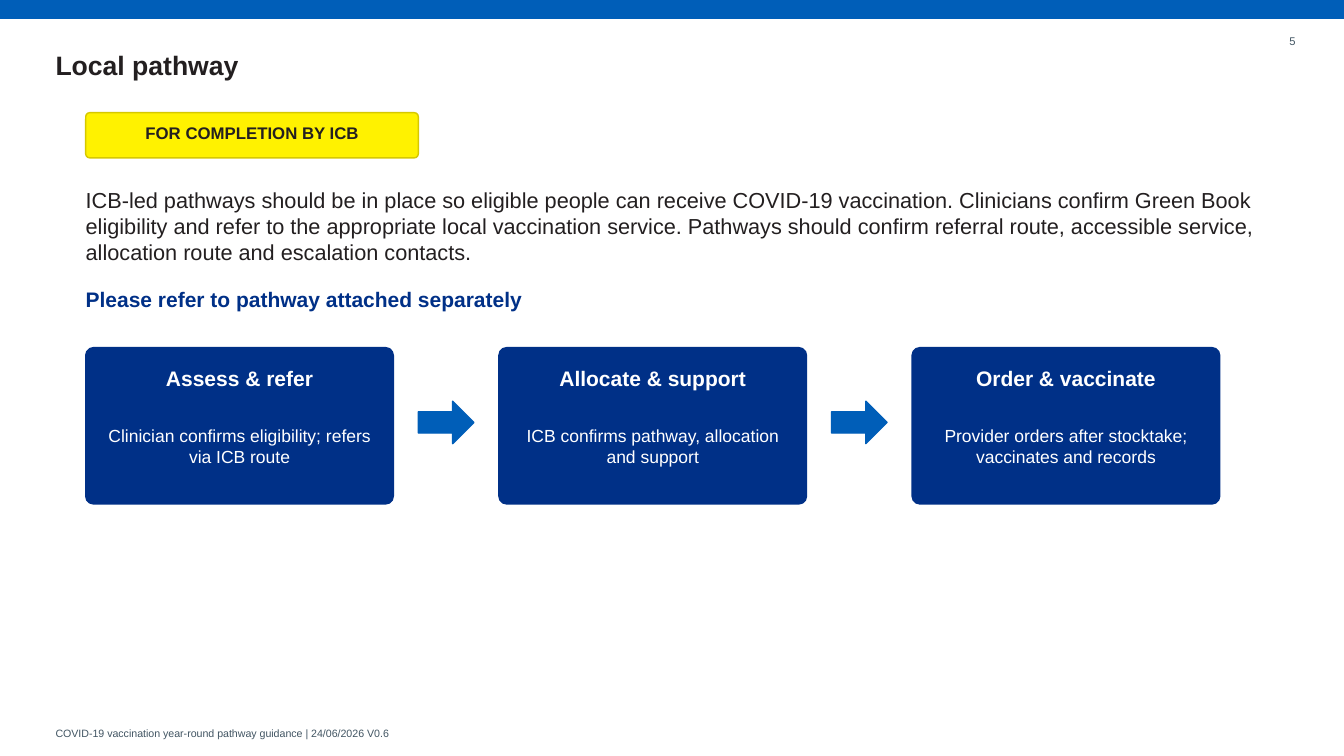
from dataclasses import dataclass

from pptx import Presentation
from pptx.dml.color import RGBColor
from pptx.enum.shapes import MSO_SHAPE
from pptx.enum.text import MSO_ANCHOR, PP_ALIGN
from pptx.util import Cm, Pt

RECTANGLE = MSO_SHAPE.RECTANGLE
ROUNDED = MSO_SHAPE.ROUNDED_RECTANGLE
RIGHT_ARROW = MSO_SHAPE.RIGHT_ARROW
MIDDLE = MSO_ANCHOR.MIDDLE
LEFT, CENTER, RIGHT = PP_ALIGN.LEFT, PP_ALIGN.CENTER, PP_ALIGN.RIGHT


@dataclass(frozen=True)
class Theme:
    font: str = "Arial"
    ink: str = "231F20"
    muted: str = "425563"
    blue: str = "005EB8"
    navy: str = "003087"
    yellow: str = "FFF200"
    yellow_edge: str = "D6C800"
    white: str = "FFFFFF"
    title_size: float = 19
    body_size: float = 15.5
    heading_size: float = 15
    detail_size: float = 12.5
    badge_size: float = 12
    number_size: float = 8
    footer_size: float = 7.6


THEME = Theme()
SLIDE_WIDTH, SLIDE_HEIGHT = 33.86, 19.05
MARGIN, INDENT = 1.4, 2.16
CARD_TOP, CARD_WIDTH, CARD_HEIGHT, CARD_PITCH = 8.76, 7.75, 3.94, 10.41

STEPS = [
    ("Assess & refer", "Clinician confirms eligibility; refers via ICB route"),
    ("Allocate & support", "ICB confirms pathway, allocation and support"),
    ("Order & vaccinate", "Provider orders after stocktake; vaccinates and records"),
]


def add_block(slide, kind, left, top, width, height, fill, edge=None, rounding=None):
    """Add a filled preset shape, outlined in its own colour unless edge is given."""
    block = slide.shapes.add_shape(kind, Cm(left), Cm(top), Cm(width), Cm(height))
    block.shadow.inherit = False
    block.fill.solid()
    block.fill.fore_color.rgb = RGBColor.from_string(fill)
    block.line.color.rgb = RGBColor.from_string(edge or fill)
    block.line.width = Pt(1)
    if rounding is not None:
        block.adjustments[0] = rounding


def add_label(slide, text, left, top, width, height, size,
              color=THEME.ink, bold=False, align=LEFT):
    label = slide.shapes.add_textbox(Cm(left), Cm(top), Cm(width), Cm(height))
    frame = label.text_frame
    frame.text = text
    frame.word_wrap = True
    frame.vertical_anchor = MIDDLE
    frame.margin_left = frame.margin_top = frame.margin_right = frame.margin_bottom = 0
    paragraph = frame.paragraphs[0]
    paragraph.alignment = align
    font = paragraph.runs[0].font
    font.name = THEME.font
    font.size = Pt(size)
    font.bold = bold
    font.color.rgb = RGBColor.from_string(color)


def add_page_frame(slide):
    """Add the top bar, title, page number and footer."""
    add_block(slide, RECTANGLE, 0, 0, SLIDE_WIDTH, 0.46, THEME.blue)
    add_label(slide, "Local pathway", MARGIN, 1.07, 29.46, 1.14,
              THEME.title_size, bold=True)
    add_label(slide, "5", 31.62, 0.71, 1.02, 0.64,
              THEME.number_size, THEME.muted, align=RIGHT)
    add_label(slide, "COVID-19 vaccination year-round pathway guidance | 24/06/2026 V0.6",
              MARGIN, 18.24, 24.13, 0.46, THEME.footer_size, THEME.muted)


def add_badge(slide):
    add_block(slide, ROUNDED, INDENT, 2.84, 8.38, 1.14,
              THEME.yellow, THEME.yellow_edge, 0.09)
    add_label(slide, "FOR COMPLETION BY ICB", INDENT + 0.51, 3.15, 7.37, 0.41,
              THEME.badge_size, bold=True, align=CENTER)


def add_introduction(slide):
    add_label(slide,
              "ICB-led pathways should be in place so eligible people can receive "
              "COVID-19 vaccination. Clinicians confirm Green Book eligibility and "
              "refer to the appropriate local vaccination service. Pathways should "
              "confirm referral route, accessible service, allocation route and "
              "escalation contacts.",
              INDENT, 4.62, 29.59, 2.16, THEME.body_size)
    add_label(slide, "Please refer to pathway attached separately",
              INDENT, 7.16, 28.7, 0.76, THEME.heading_size, THEME.navy, bold=True)


def add_step_card(slide, left, heading, detail):
    add_block(slide, ROUNDED, left, CARD_TOP, CARD_WIDTH, CARD_HEIGHT,
              THEME.navy, rounding=0.05)
    add_label(slide, heading, left + 0.3, CARD_TOP + 0.41, CARD_WIDTH - 0.6, 0.71,
              THEME.heading_size, THEME.white, bold=True, align=CENTER)
    add_label(slide, detail, left + 0.41, CARD_TOP + 1.4, CARD_WIDTH - 0.82, 2.16,
              THEME.detail_size, THEME.white, align=CENTER)


def add_pathway(slide):
    """Add the step cards with an arrow after each one but the last."""
    for index, (heading, detail) in enumerate(STEPS):
        left = INDENT + index * CARD_PITCH
        add_step_card(slide, left, heading, detail)
        if index < len(STEPS) - 1:
            add_block(slide, RIGHT_ARROW, left + CARD_WIDTH + 0.63, CARD_TOP + 1.35,
                      1.4, 1.07, THEME.blue)


def main():
    presentation = Presentation()
    presentation.slide_width = Cm(SLIDE_WIDTH)
    presentation.slide_height = Cm(SLIDE_HEIGHT)
    slide = presentation.slides.add_slide(presentation.slide_layouts[6])
    add_page_frame(slide)
    add_badge(slide)
    add_introduction(slide)
    add_pathway(slide)
    presentation.save("out.pptx")


if __name__ == "__main__":
    main()
